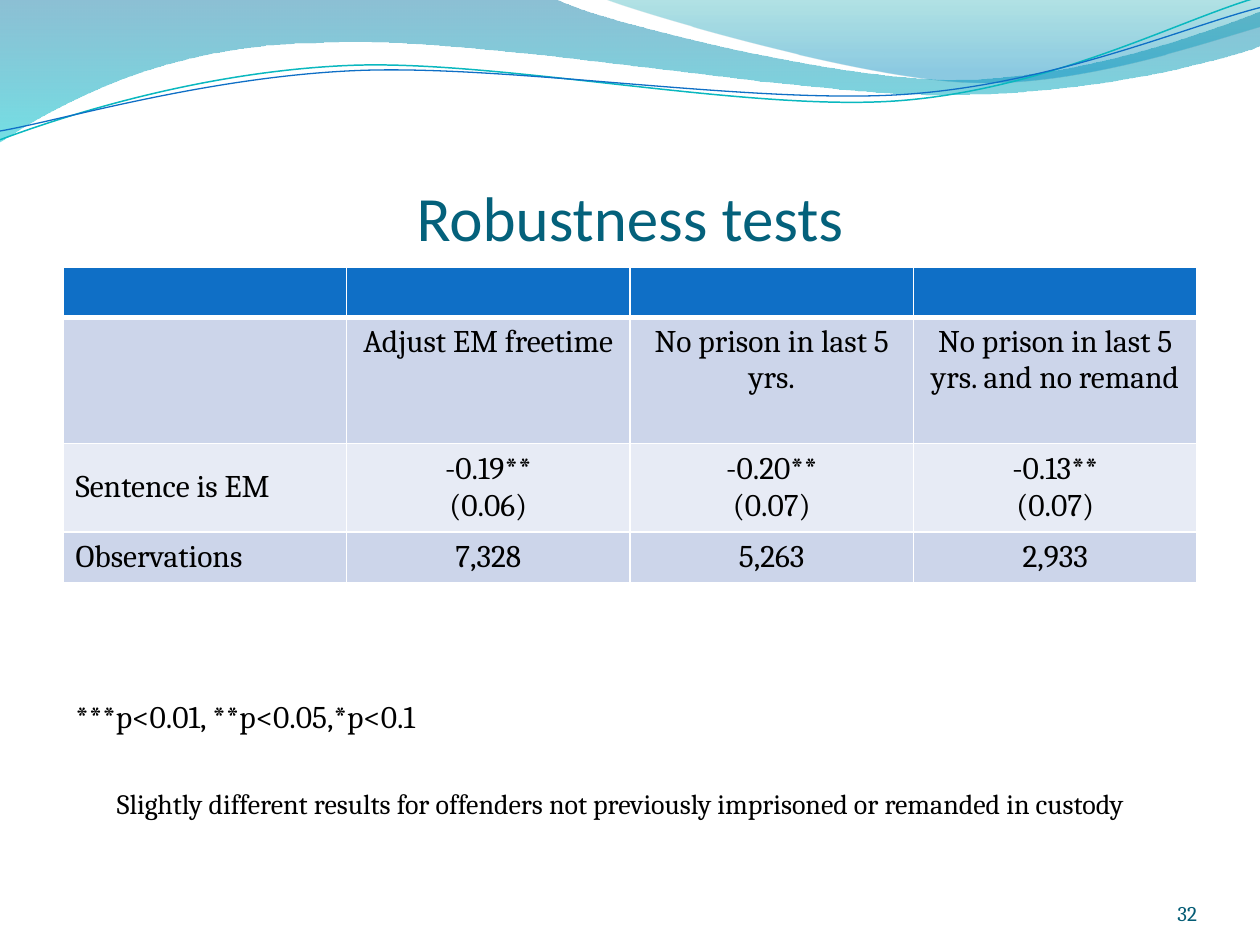
"""Build the robustness tests slide with its wave header and results table."""
from math import cos, radians, sin

from lxml import etree
from pptx import Presentation
from pptx.dml.color import RGBColor
from pptx.enum.text import MSO_ANCHOR, PP_ALIGN
from pptx.oxml.ns import qn
from pptx.util import Inches, Pt

LEFT, CENTER, RIGHT = PP_ALIGN.LEFT, PP_ALIGN.CENTER, PP_ALIGN.RIGHT
TOP, MIDDLE, BOTTOM = MSO_ANCHOR.TOP, MSO_ANCHOR.MIDDLE, MSO_ANCHOR.BOTTOM

BLACK = RGBColor(0x00, 0x00, 0x00)
TITLE_TEAL = RGBColor(0x04, 0x61, 0x7B)
NUMBER_TEAL = RGBColor(0x04, 0x5C, 0x75)
HEADER_BLUE = RGBColor(0x0F, 0x6F, 0xC6)
BAND_DARK = RGBColor(0xCC, 0xD5, 0xEA)
BAND_LIGHT = RGBColor(0xE7, 0xEB, 0xF5)
LINE_TEAL = RGBColor(0x0A, 0xB8, 0xBF)
WAVE_BLUE = RGBColor(0x00, 0x74, 0xA1)
WAVE_CYAN = RGBColor(0x00, 0xC6, 0xCF)
CREST_TEAL = RGBColor(0x00, 0xA1, 0xA9)
CREST_BLUE = RGBColor(0x00, 0x8B, 0xBF)

LINE_TILT = -2.7

LEFT_WAVE = [
    [(0, -0.01)], [(4.4, -0.01)],
    [(4.76, 0.17), (6.64, 0.63), (7.58, 0.63)],
    [(8.53, 0.63), (9.58, 0.26), (10, 0.09)],
    [(10.01, 0.36)],
    [(9.83, 0.44), (8.7, 0.76), (7.46, 0.75)],
    [(6.22, 0.75), (3.82, 0.28), (2.57, 0.34)],
    [(1.29, 0.35), (0.46, 0.83), (-0.01, 1.13)],
    [(0, -0.01)],
]
RIGHT_WAVE = [
    [(4.79, -0.01)],
    [(5.09, 0.11), (6.82, 0.62), (7.69, 0.65)],
    [(8.56, 0.69), (9.61, 0.32), (10, 0.21)],
    [(10, 0)], [(4.79, -0.01)],
]
TEAL_LINE = [
    [(0, 1.11)],
    [(0.48, 0.93), (1.58, 0.57), (2.77, 0.52)],
    [(3.95, 0.47), (5.93, 0.89), (7.13, 0.8)],
    [(8.33, 0.71), (9.38, 0.15), (9.98, -0.02)],
]
BLUE_LINE = [
    [(0, 1.04)],
    [(0.47, 0.96), (1.64, 0.61), (2.83, 0.56)],
    [(4.03, 0.51), (5.97, 0.83), (7.17, 0.75)],
    [(8.36, 0.67), (9.41, 0.21), (10, 0.06)],
]

ROWS = [
    ["", "", "", ""],
    ["", "Adjust EM freetime", "No prison in last 5 yrs.",
     "No prison in last 5 yrs. and no remand"],
    ["Sentence is EM", "-0.19**\n(0.06)", "-0.20**\n(0.07)", "-0.13**\n(0.07)"],
    ["Observations", "7,328", "5,263", "2,933"],
]
ROW_HEIGHTS = [0.4, 1, 0.7, 0.4]
ROW_FILLS = [HEADER_BLUE, BAND_DARK, BAND_LIGHT, BAND_DARK]
ROW_ANCHORS = [TOP, TOP, MIDDLE, MIDDLE]


def rotate(segments, box, degrees):
    """Return the segments turned clockwise about the center of a box."""
    cosine, sine = cos(radians(degrees)), sin(radians(degrees))
    left, top, width, height = box
    center_x, center_y = left + width / 2, top + height / 2
    return [[(center_x + (x - center_x) * cosine - (y - center_y) * sine,
              center_y + (x - center_x) * sine + (y - center_y) * cosine)
             for x, y in segment] for segment in segments]


class SlideBuilder:
    """Hold the text style and the current slide."""

    def __init__(self, slide, font="Cambria", color=BLACK):
        self.slide = slide
        self.font = font
        self.color = color

    def style(self, text_frame, size, align, color=None, font=None):
        for paragraph in text_frame.paragraphs:
            paragraph.alignment = align
            for run in paragraph.runs:
                run.font.size = Pt(size)
                run.font.name = font or self.font
                run.font.color.rgb = color or self.color

    def outline(self, segments, box, close):
        left, top, width, height = map(Inches, box)
        ends = [(Inches(segment[-1][0]), Inches(segment[-1][1])) for segment in segments]
        builder = self.slide.shapes.build_freeform(*ends[0])
        builder.add_line_segments(ends[1:], close=close)
        shape = builder.convert_to_shape()
        shape.left, shape.top, shape.width, shape.height = left, top, width, height
        shape.shadow.inherit = False
        contour = next(shape._element.iter(qn("a:path")))
        contour.set("w", str(width))
        contour.set("h", str(height))
        for step, segment in zip(list(contour), segments):
            if len(segment) == 3:
                curve = etree.Element(qn("a:cubicBezTo"))
                contour.replace(step, curve)
                step = curve
            else:
                step.remove(step[0])
            for x, y in segment:
                etree.SubElement(step, qn("a:pt"), x=str(Inches(x) - left),
                                 y=str(Inches(y) - top))
        return shape

    def wave(self, segments, box, stops):
        shape = self.outline(segments, box, close=True)
        shape.line.fill.background()
        shape.fill.gradient()
        shape.fill.gradient_angle = 270
        for stop, (position, color, opacity) in zip(shape.fill.gradient_stops, stops):
            stop.position = position
            stop.color.rgb = color
        colors = shape._element.spPr.iter(qn("a:srgbClr"))
        for element, (position, color, opacity) in zip(colors, stops):
            etree.SubElement(element, qn("a:alpha"), val=str(opacity * 1000))

    def wave_line(self, segments, box, color, width):
        shape = self.outline(rotate(segments, box, -LINE_TILT), box, close=False)
        shape.rotation = LINE_TILT
        shape.fill.background()
        shape.line.color.rgb = color
        shape.line.width = Pt(width)

    def text(self, text, box, size, align=LEFT, anchor=TOP,
             margins=(0.1, 0.05, 0.1, 0.05), color=None, font=None):
        shape = self.slide.shapes.add_textbox(*map(Inches, box))
        frame = shape.text_frame
        frame.word_wrap = True
        frame.vertical_anchor = anchor
        (frame.margin_left, frame.margin_top,
         frame.margin_right, frame.margin_bottom) = map(Inches, margins)
        frame.text = text
        self.style(frame, size, align, color, font)

    def borders(self, cell, widths):
        properties = cell._tc.get_or_add_tcPr()
        for index, (side, width) in enumerate(zip("LRTB", widths)):
            line = etree.Element(qn(f"a:ln{side}"), w=str(Pt(width)))
            fill = etree.SubElement(line, qn("a:solidFill"))
            etree.SubElement(fill, qn("a:srgbClr"), val="FFFFFF")
            properties.insert(index, line)

    def table(self, rows, box):
        frame = self.slide.shapes.add_table(len(rows), len(rows[0]), *map(Inches, box))
        table = frame.table
        for row_index, row in enumerate(rows):
            table.rows[row_index].height = Inches(ROW_HEIGHTS[row_index])
            for column_index, text in enumerate(row):
                cell = table.cell(row_index, column_index)
                cell.text = text
                cell.vertical_anchor = ROW_ANCHORS[row_index]
                cell.fill.solid()
                cell.fill.fore_color.rgb = ROW_FILLS[row_index]
                self.style(cell.text_frame, 18, CENTER if column_index else LEFT)
                self.borders(cell, (1, 1, 3 if row_index == 1 else 1,
                                    3 if row_index == 0 else 1))


def main():
    presentation = Presentation()
    presentation.slide_width, presentation.slide_height = Inches(10), Inches(7.5)
    builder = SlideBuilder(presentation.slides.add_slide(presentation.slide_layouts[6]))

    builder.wave(LEFT_WAVE, (-0.01, -0.01, 10.02, 1.14),
                 [(0, WAVE_BLUE, 45), (1, WAVE_CYAN, 55)])
    builder.wave(RIGHT_WAVE, (4.79, -0.01, 5.21, 0.7),
                 [(0, CREST_TEAL, 30), (0.8, CREST_BLUE, 45)])
    builder.wave_line(TEAL_LINE, (-0.02, 0.22, 10.02, 0.71), LINE_TEAL, 0.85)
    builder.wave_line(BLUE_LINE, (-0.02, 0.3, 10.03, 0.58), HEADER_BLUE, 0.75)

    builder.text("Robustness tests", (0.5, 0.77, 9, 1.25), 36, CENTER, BOTTOM,
                 (0, 0.05, 0, 0), TITLE_TEAL, "Calibri")
    builder.table(ROWS, (0.5, 2.12, 9, sum(ROW_HEIGHTS)))
    builder.text("32", (8.67, 6.95, 0.83, 0.4), 12, RIGHT, BOTTOM,
                 (0, 0, 0, 0), NUMBER_TEAL)
    builder.text("***p<0.01, **p<0.05,*p<0.1", (0.5, 5.48, 6.38, 0.4), 18)
    builder.text("Slightly different results for offenders not previously imprisoned "
                 "or remanded in custody", (0.2, 6.19, 9.45, 0.37), 16, CENTER)
    presentation.save("out.pptx")


if __name__ == "__main__":
    main()
